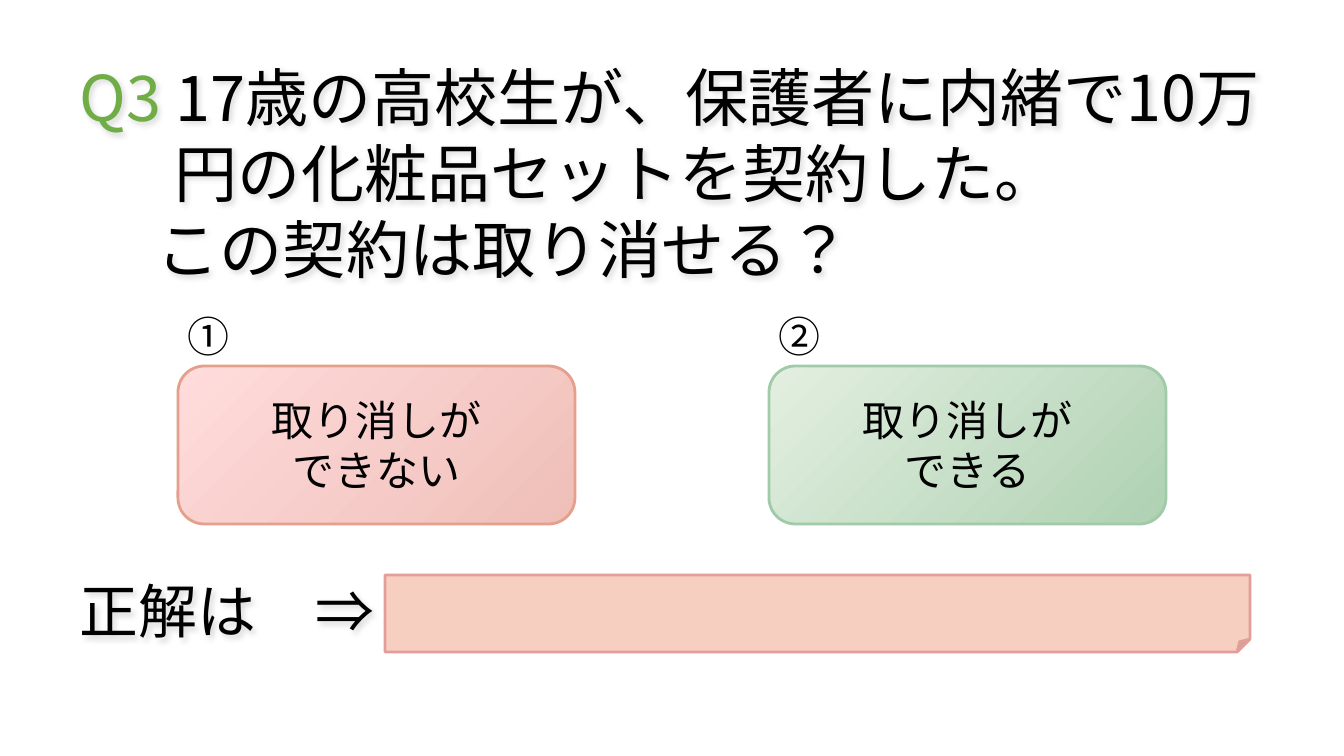
from lxml import etree
from pptx import Presentation
from pptx.dml.color import RGBColor as RGB
from pptx.enum.lang import MSO_LANGUAGE_ID as LANG
from pptx.enum.shapes import MSO_SHAPE as SHAPE
from pptx.enum.text import MSO_ANCHOR as ANCHOR, PP_ALIGN as ALIGN
from pptx.oxml import parse_xml
from pptx.oxml.ns import nsdecls, qn
from pptx.util import Pt

PX = 914400 / 100.8
FONT = "Noto Sans CJK JP"

BLACK = RGB(0x00, 0x00, 0x00)
GREEN = RGB(0x70, 0xAD, 0x47)
ANSWER_FILL = RGB(0xF7, 0xCF, 0xC1)
ANSWER_LINE = RGB(0xE4, 0x9E, 0x99)

# Each paragraph: runs of (text, colour), left margin, first-line indent
QUESTION = [
    ([("Q3 ", GREEN),
      ("17歳の高校生が、保護者に内緒で10万円の化粧品セットを契約した。", BLACK)], 95, -95),
    ([("この契約は取り消せる？", BLACK)], 77, 0),
]
ANSWER_LABEL = [([("正解は　⇒", BLACK)], 0, 0)]

# number, lines, dark end, light end, outline
CHOICES = [
    ("①", ["取り消しが", "できない"],
     RGB(0xEF, 0xBF, 0xB8), RGB(0xFF, 0xDC, 0xDC), RGB(0xE5, 0xA0, 0x8D)),
    ("②", ["取り消しが", "できる"],
     RGB(0xAF, 0xD1, 0xB2), RGB(0xE3, 0xEF, 0xE1), RGB(0xA0, 0xCA, 0xA8)),
]
LEFT, TEXT_W = 80, 1190
CHOICE_X, CHOICE_STEP, CHOICE_Y = 178, 591, 366
CHOICE_W, CHOICE_H = 397, 158
NUMBER_Y, NUMBER_W, NUMBER_H = 306, 62, 61
ANSWER_Y = 575

SOFT_SHADOW = (
    f'<a:effectLst {nsdecls("a")}><a:outerShdw blurRad="50800" dist="25400" '
    'dir="2700000" algn="tl"><a:srgbClr val="000000"><a:alpha val="15000"/>'
    '</a:srgbClr></a:outerShdw></a:effectLst>')


def px(*lengths):
    return [round(n * PX) for n in lengths]


def plain(lines):
    return [([(line, BLACK)], 0, 0) for line in lines]


def write(s, paragraphs, size, align=ALIGN.LEFT, anchor=ANCHOR.TOP, inset=None):
    tf = s.text_frame
    tf.word_wrap = True
    tf.vertical_anchor = anchor
    if inset is not None:
        tf.margin_left = tf.margin_top = tf.margin_right = tf.margin_bottom = inset
    for i, (runs, margin, indent) in enumerate(paragraphs):
        p = tf.add_paragraph() if i else tf.paragraphs[0]
        p.alignment = align
        pPr = p._p.get_or_add_pPr()
        for key, length in zip(("marL", "indent"), px(margin, indent)):
            pPr.set(key, str(length))
        for text, color in runs:
            r = p.add_run()
            r.text = text
            r.font.size = Pt(size)
            r.font.name = FONT
            r.font.color.rgb = color
            r.font.language_id = LANG.JAPANESE
            ea = etree.SubElement(r._r.get_or_add_rPr(), qn("a:ea"))
            ea.set("typeface", FONT)


def add_text(slide, box, paragraphs, size, shadow=False, **fmt):
    s = slide.shapes.add_textbox(*px(*box))
    write(s, paragraphs, size, **fmt)
    if shadow:
        s._element.spPr.append(parse_xml(SOFT_SHADOW))


def add_box(slide, kind, box, outline):
    s = slide.shapes.add_shape(kind, *px(*box))
    s.shadow.inherit = False
    s.line.color.rgb = outline
    s.line.width = Pt(2)
    return s


def add_choice(slide, x, number, lines, dark, light, outline):
    s = add_box(slide, SHAPE.ROUNDED_RECTANGLE, (x, CHOICE_Y, CHOICE_W, CHOICE_H), outline)
    s.fill.gradient()
    s.fill.gradient_angle = 135
    for stop, color in zip(s.fill.gradient_stops, (dark, light)):
        stop.color.rgb = color
    write(s, plain(lines), 30, align=ALIGN.CENTER, anchor=ANCHOR.MIDDLE)
    add_text(slide, (x, NUMBER_Y, NUMBER_W, NUMBER_H), plain([number]), 30)


def main():
    prs = Presentation()
    prs.slide_width, prs.slide_height = px(1344, 756)
    slide = prs.slides.add_slide(prs.slide_layouts[6])
    add_text(slide, (LEFT, 59, TEXT_W, 229), QUESTION, 45, shadow=True, inset=0)
    for i, choice in enumerate(CHOICES):
        add_choice(slide, CHOICE_X + i * CHOICE_STEP, *choice)
    add_text(slide, (LEFT, ANSWER_Y, TEXT_W, 73), ANSWER_LABEL, 42, shadow=True, inset=0)
    s = add_box(slide, SHAPE.FOLDED_CORNER, (385, ANSWER_Y, 865, 77), ANSWER_LINE)
    s.fill.solid()
    s.fill.fore_color.rgb = ANSWER_FILL
    prs.save("out.pptx")


if __name__ == "__main__":
    main()
